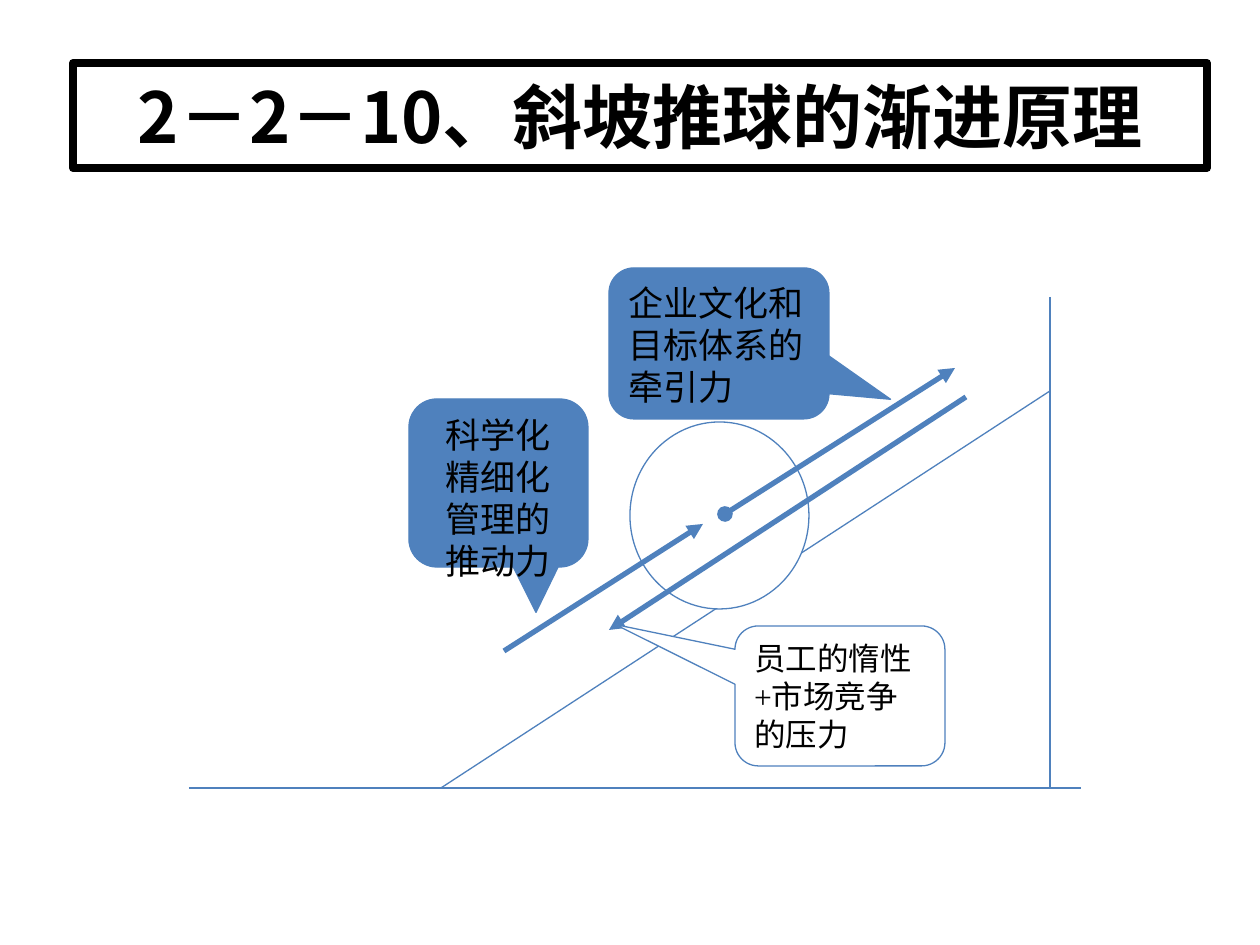
"""Build the slide on pushing a ball up a slope step by step."""
from lxml import etree
from pptx import Presentation
from pptx.dml.color import RGBColor
from pptx.enum import shapes, text
from pptx.oxml import ns
from pptx.util import Emu, Pt

PX = 914400 // 126
COLORS = {"ink": "000000", "paper": "FFFFFF", "blue": "4F81BD"}
EAST_ASIAN = "Noto Sans CJK SC"
KIND = shapes.MSO_SHAPE
ALIGN = text.PP_ALIGN


def add_box(parent, kind, bounds, fill, line, width, words="", size=20,
            font="Times New Roman", align=ALIGN.LEFT, anchor=text.MSO_ANCHOR.TOP):
    box = parent.add_shape(kind, *(Emu(n * PX) for n in bounds))
    box.shadow.inherit = False
    if fill:
        box.fill.solid()
        box.fill.fore_color.rgb = RGBColor.from_string(COLORS[fill])
    else:
        box.fill.background()
    box.line.color.rgb = RGBColor.from_string(COLORS[line])
    box.line.width = Pt(width)
    if words:
        frame = box.text_frame
        frame.word_wrap = True
        frame.vertical_anchor = anchor
        para = frame.paragraphs[0]
        para.text = words
        para.alignment = align
        para.font.size = Pt(size)
        para.font.color.rgb = RGBColor.from_string(COLORS["ink"])
        para.font.name = font
        defaults = para._p.pPr.find(ns.qn("a:defRPr"))
        etree.SubElement(defaults, ns.qn("a:ea"), typeface=EAST_ASIAN)
    return box


def add_line(parent, ends, width, **arrowheads):
    line = parent.add_connector(shapes.MSO_CONNECTOR.STRAIGHT, *(Emu(n * PX) for n in ends))
    line.line.color.rgb = RGBColor.from_string(COLORS["blue"])
    line.line.width = Pt(width)
    properties = line._element.spPr
    outline = properties.find(ns.qn("a:ln"))
    for end, kind in arrowheads.items():
        etree.SubElement(outline, ns.qn(f"a:{end}"), type=kind)
    etree.SubElement(properties, ns.qn("a:effectLst"))


deck = Presentation()
deck.slide_width, deck.slide_height = Emu(1260 * PX), Emu(945 * PX)
page = deck.slides.add_slide(deck.slide_layouts[6])

title = add_box(page.shapes, KIND.RECTANGLE, (73, 63, 1134, 105), None, "ink", 4.5,
                "2－2－10、斜坡推球的渐进原理", 40, EAST_ASIAN, ALIGN.CENTER,
                text.MSO_ANCHOR.MIDDLE)
title.text_frame.paragraphs[0].font.bold = True

diagram = page.shapes.add_group_shape().shapes
slope, ground, wall = (441, 788, 1050, 391), (189, 788, 1081, 788), (1050, 297, 1050, 788)
for edge in (slope, ground, wall):
    add_line(diagram, edge, 0.75)
add_box(diagram, KIND.OVAL, (630, 422, 179, 187), "paper", "blue", 0.75)

forces = [
    ((966, 397, 609, 630), {"tailEnd": "triangle"}, (735, 626, 210, 140),
     (-1.07, -0.51), "paper", "员工的惰性+市场竞争的压力", 18, ALIGN.LEFT),
    ((504, 651, 703, 524), {"tailEnd": "triangle"}, (409, 399, 179, 168),
     (0.21, 0.77), "blue", "科学化精细化管理的推动力", 20, ALIGN.CENTER),
    ((725, 514, 955, 368), {"headEnd": "oval", "tailEnd": "triangle"}, (609, 268, 220, 151),
     (0.78, 0.37), "blue", "企业文化和目标体系的牵引力", 20, ALIGN.LEFT),
]
for arrow, arrowheads, bounds, tip, fill, words, size, align in forces:
    add_line(diagram, arrow, 3, **arrowheads)
    callout = add_box(diagram, KIND.ROUNDED_RECTANGULAR_CALLOUT, bounds, fill, "blue", 0.75,
                      words, size, align=align)
    callout.adjustments[0], callout.adjustments[1] = tip

deck.save("out.pptx")
